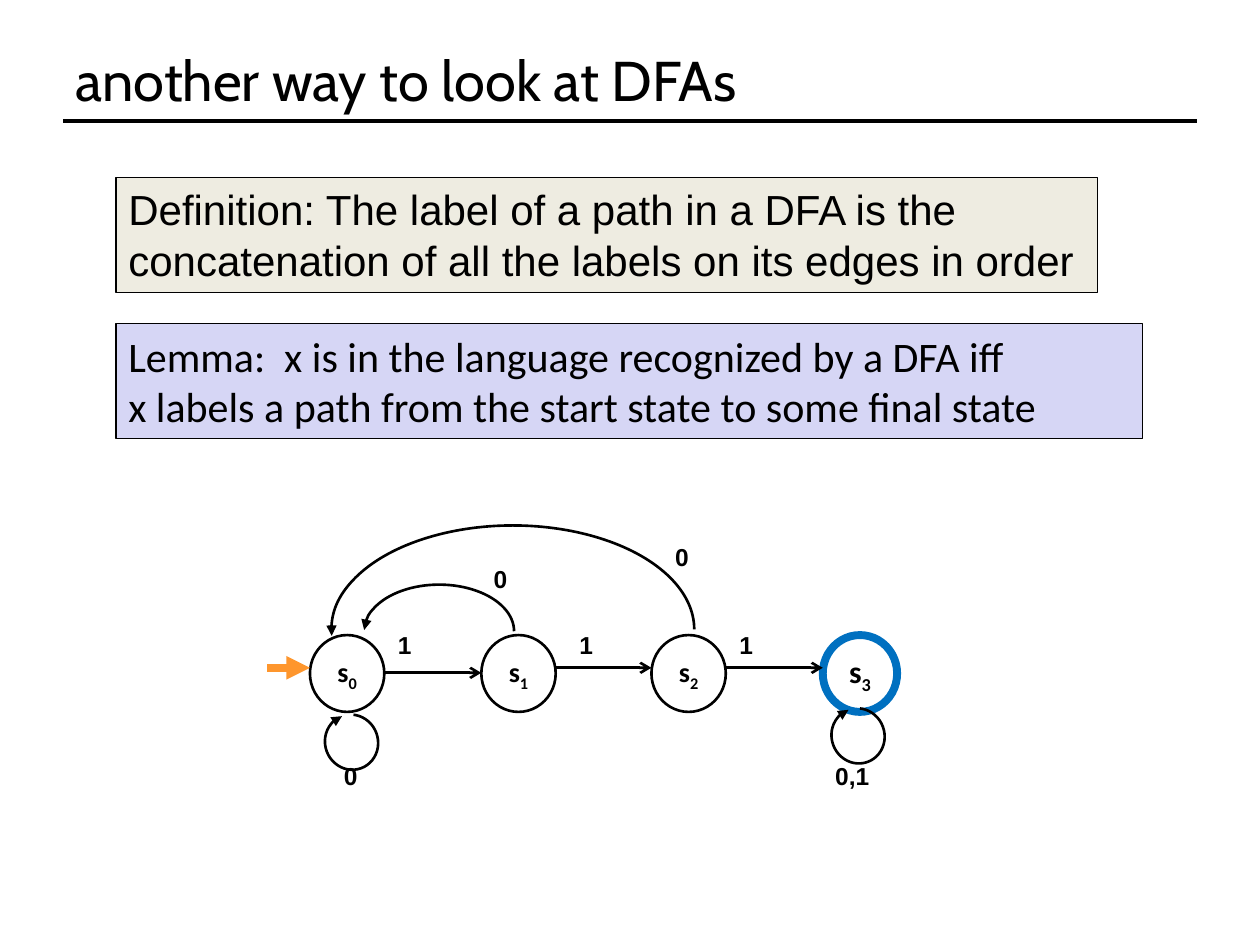
from lxml import etree
from pptx import Presentation
from pptx.dml.color import RGBColor
from pptx.enum.shapes import MSO_CONNECTOR, MSO_SHAPE
from pptx.enum.text import MSO_ANCHOR, PP_ALIGN
from pptx.oxml.ns import qn
from pptx.util import Inches, Pt

BLACK = "000000"
STATE_LEFTS = [2.46, 3.82, 5.17, 6.53]
STATE_TOP, STATE_WIDTH, STATE_HEIGHT = 5.04, 0.59, 0.61


def color(hex_string):
    return RGBColor.from_string(hex_string)


def style_line(line, hex_string, width, arrow_end=None, arrow_type="triangle"):
    line.color.rgb = color(hex_string)
    line.width = Pt(width)
    if arrow_end:
        ln = line._get_or_add_ln()
        etree.SubElement(ln, qn(f"a:{arrow_end}"), type=arrow_type)


def write_text(shape, lines, font="Arial", size=14, bold=False, subscript=None,
               align=PP_ALIGN.LEFT, anchor=MSO_ANCHOR.TOP, side_margin=0.1):
    frame = shape.text_frame
    frame.word_wrap = True
    frame.vertical_anchor = anchor
    frame.margin_left = frame.margin_right = Inches(side_margin)
    for index, line in enumerate(lines):
        paragraph = frame.add_paragraph() if index else frame.paragraphs[0]
        paragraph.alignment = align
        for text in filter(None, (line, subscript)):
            run = paragraph.add_run()
            run.text = text
            run.font.name = font
            run.font.size = Pt(size)
            run.font.bold = bold
            run.font.color.rgb = color(BLACK)
            if text is subscript:
                run._r.get_or_add_rPr().set("baseline", "-25000")


def add_label(slide, lines, box, **text_format):
    label = slide.shapes.add_textbox(*map(Inches, box))
    write_text(label, lines, **text_format)


def add_outline(slide, kind, box, fill=None, line=BLACK, width=1.5, **arrow):
    shape = slide.shapes.add_shape(kind, *map(Inches, box))
    shape.shadow.inherit = False
    if fill:
        shape.fill.solid()
        shape.fill.fore_color.rgb = color(fill)
    else:
        shape.fill.background()
    style_line(shape.line, line, width, **arrow)
    return shape


def add_statement(slide, lines, box, fill, font):
    statement = add_outline(slide, MSO_SHAPE.RECTANGLE, box, fill, width=0.75)
    write_text(statement, lines, font=font, size=24)


def add_state(slide, number, left, final=False):
    state = add_outline(slide, MSO_SHAPE.OVAL,
                        (left, STATE_TOP, STATE_WIDTH, STATE_HEIGHT),
                        line="0070C0" if final else BLACK,
                        width=4.5 if final else 1.5)
    write_text(state, ["s"], font="Calibri", size=18 if final else 16, bold=True,
               subscript=str(number), align=PP_ALIGN.CENTER,
               anchor=MSO_ANCHOR.MIDDLE, side_margin=0)


def add_straight(slide, x1, x2, y, line=BLACK, width=1.5, **arrow):
    connector = slide.shapes.add_connector(
        MSO_CONNECTOR.STRAIGHT, *map(Inches, (x1, y, x2, y)))
    style_line(connector.line, line, width, **arrow)
    etree.SubElement(connector._element.spPr, qn("a:effectLst"))


def add_arc(slide, box, start, arrow_end, rotation=0):
    arc = add_outline(slide, MSO_SHAPE.ARC, box, arrow_end=arrow_end)
    arc.adjustments[0] = start
    arc.adjustments[1] = 0
    arc.rotation = rotation


def main():
    prs = Presentation()
    prs.slide_width, prs.slide_height = Inches(10), Inches(7.5)
    slide = prs.slides.add_slide(prs.slide_layouts[6])

    # Title and rule
    add_straight(slide, 0.5, 9.5, 0.96, width=2)
    add_label(slide, ["another way to look at DFAs"], (0.5, 0.3, 9, 0.66),
              font="Cabin", size=32, anchor=MSO_ANCHOR.MIDDLE)

    # States
    last = len(STATE_LEFTS) - 1
    for number, left in enumerate(STATE_LEFTS):
        add_state(slide, number, left, final=number == last)

    # Forward transitions
    for left, target, y in zip(STATE_LEFTS, STATE_LEFTS[1:], (5.34, 5.3, 5.3)):
        add_straight(slide, left + STATE_WIDTH, target, y,
                     arrow_end="tailEnd", arrow_type="arrow")

    # Transitions back to the start state
    add_arc(slide, (2.89, 4.64, 1.19, 0.74), 108.56, "headEnd")
    add_arc(slide, (2.63, 4.17, 2.88, 1.65), 106.77, "headEnd")

    # Self loops
    for left, top in ((2.57, 5.68), (6.59, 5.63)):
        add_arc(slide, (left, top, 0.44, 0.42), 14.54, "tailEnd", rotation=249.8)

    # Start arrow
    add_straight(slide, 2.12, STATE_LEFTS[0], 5.3, line="FE962D", width=4.5,
                 arrow_end="tailEnd")

    # Transition labels
    for symbol, left, top, width in (
            ("1", 3.06, 4.95, 0.25), ("1", 4.5, 4.95, 0.25),
            ("1", 5.77, 4.95, 0.25), ("0", 3.82, 4.43, 0.25),
            ("0", 5.26, 4.25, 0.25), ("0", 2.63, 5.99, 0.25),
            ("0,1", 6.53, 5.99, 0.59)):
        add_label(slide, [symbol], (left, top, width, 0.36), bold=True)

    # Lemma and definition
    add_statement(slide,
                  ["Lemma:  x is in the language recognized by a DFA iff",
                   "x labels a path from the start state to some final state"],
                  (0.92, 2.57, 8.15, 0.91), "D6D6F5", "Calibri")
    add_statement(slide,
                  ["Definition: The label of a path in a DFA is the",
                   "concatenation of all the labels on its edges in order"],
                  (0.92, 1.41, 7.79, 0.91), "EEECE1", "Arial")

    prs.save("out.pptx")


if __name__ == "__main__":
    main()
